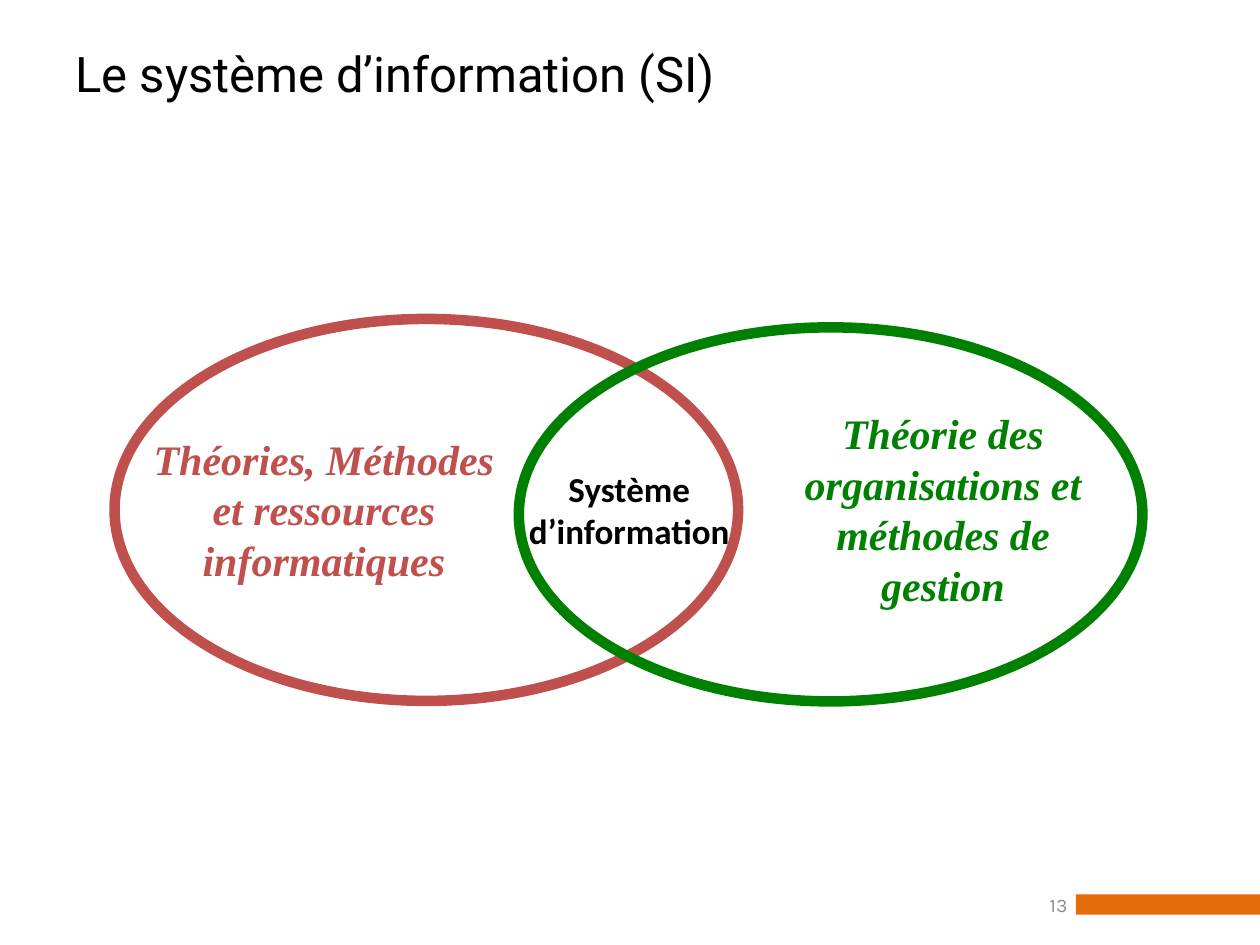
from dataclasses import dataclass

from pptx import Presentation
from pptx.dml.color import RGBColor
from pptx.enum.shapes import MSO_SHAPE
from pptx.enum.text import MSO_ANCHOR, PP_ALIGN
from pptx.util import Cm, Pt

RECTANGLE, OVAL = MSO_SHAPE.RECTANGLE, MSO_SHAPE.OVAL
TOP, MIDDLE = MSO_ANCHOR.TOP, MSO_ANCHOR.MIDDLE
LEFT, CENTER, RIGHT = PP_ALIGN.LEFT, PP_ALIGN.CENTER, PP_ALIGN.RIGHT

BLACK = RGBColor(0x00, 0x00, 0x00)
GREY = RGBColor(0x8C, 0x8C, 0x8C)
ORANGE = RGBColor(0xE4, 0x6C, 0x0A)
RED = RGBColor(0xC0, 0x50, 0x4D)
GREEN = RGBColor(0x00, 0x80, 0x00)


@dataclass(frozen=True)
class Box:
    """Position and size in centimetres."""
    left: float
    top: float
    width: float
    height: float

    def lengths(self):
        return Cm(self.left), Cm(self.top), Cm(self.width), Cm(self.height)


@dataclass(frozen=True)
class Label:
    text: str
    box: Box
    font: str
    size: int
    color: RGBColor
    align: PP_ALIGN = CENTER
    anchor: MSO_ANCHOR = TOP
    bold: bool = False
    italic: bool = False


@dataclass(frozen=True)
class Domain:
    box: Box
    color: RGBColor


DOMAINS = [
    Domain(Box(2.31, 6.43, 12.57, 7.7), RED),
    Domain(Box(10.46, 6.6, 12.57, 7.54), GREEN),
]

LABELS = [
    Label("Le système d’information (SI)", Box(1.27, 0.76, 22.86, 3.18),
          "Roboto", 28, BLACK, align=LEFT),
    Label("13", Box(15.85, 17.73, 5.92, 1.02),
          "Karla", 11, GREY, align=RIGHT, anchor=MIDDLE),
    Label("Théories, Méthodes et ressources informatiques",
          Box(2.82, 8.61, 7.42, 3.33),
          "Times New Roman", 24, RED, bold=True, italic=True),
    Label("Théorie des organisations et méthodes de gestion",
          Box(15.62, 8.1, 6.78, 4.37),
          "Times New Roman", 24, GREEN, bold=True, italic=True),
    Label("Système d’information", Box(10.31, 9.3, 4.75, 1.96),
          "Calibri", 20, BLACK, bold=True),
]


def add_footer_bar(s, box: Box) -> None:
    sp = s.shapes.add_shape(RECTANGLE, *box.lengths())
    sp.shadow.inherit = False
    sp.fill.solid()
    sp.fill.fore_color.rgb = ORANGE
    sp.line.fill.background()


def add_domain(s, domain: Domain) -> None:
    """Draw one open ellipse of the Venn diagram."""
    sp = s.shapes.add_shape(OVAL, *domain.box.lengths())
    sp.shadow.inherit = False
    sp.fill.background()
    sp.line.color.rgb = domain.color
    sp.line.width = Pt(6)


def add_label(s, label: Label) -> None:
    tf = s.shapes.add_textbox(*label.box.lengths()).text_frame
    tf.word_wrap = True
    tf.vertical_anchor = label.anchor
    p = tf.paragraphs[0]
    p.text = label.text
    p.alignment = label.align
    p.font.name = label.font
    p.font.size = Pt(label.size)
    p.font.bold = label.bold
    p.font.italic = label.italic
    p.font.color.rgb = label.color


def main() -> None:
    prs = Presentation()
    prs.slide_width, prs.slide_height = Cm(25.4), Cm(19.05)
    s = prs.slides.add_slide(prs.slide_layouts[6])
    add_footer_bar(s, Box(21.69, 18.03, 3.71, 0.41))
    for domain in DOMAINS:
        add_domain(s, domain)
    for label in LABELS:
        add_label(s, label)
    prs.save("out.pptx")


if __name__ == "__main__":
    main()
